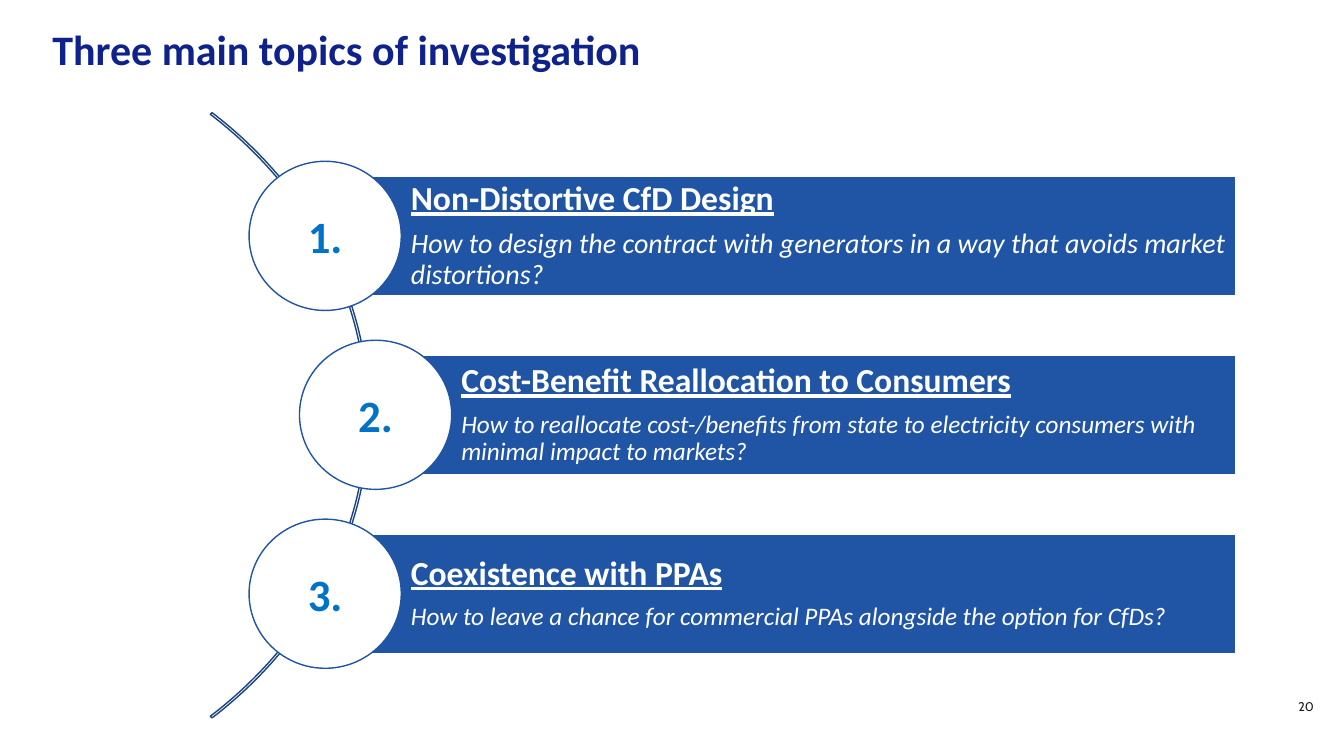
from pptx import Presentation
from pptx.dml.color import RGBColor
from pptx.enum.shapes import MSO_SHAPE
from pptx.enum.text import MSO_ANCHOR, PP_ALIGN
from pptx.util import Inches, Pt

ARC, OVAL, RECTANGLE = MSO_SHAPE.BLOCK_ARC, MSO_SHAPE.OVAL, MSO_SHAPE.RECTANGLE
MIDDLE = MSO_ANCHOR.MIDDLE
LEFT, CENTER, RIGHT = PP_ALIGN.LEFT, PP_ALIGN.CENTER, PP_ALIGN.RIGHT

UNIT = Inches(0.1)  # one grid column or row
WHITE, BLUE, DARK_BLUE = "FFFFFF", "2054A5", "1A4384"
TITLE_BLUE, NUMBER_BLUE, INK = "0F218B", "0073C8", "1D1D20"

# heading, question, question size, left edge of the circle in columns
TOPICS = [
    ("Non-Distortive CfD Design",
     "How to design the contract with generators in a way that avoids market distortions?",
     20, 24.7),
    ("Cost-Benefit Reallocation to Consumers",
     "How to reallocate cost-/benefits from state to electricity consumers with "
     "minimal impact to markets?",
     18, 29.7),
    ("Coexistence with PPAs",
     "How to leave a chance for commercial PPAs alongside the option for CfDs?",
     18, 24.7),
]
FIRST_CENTER, PITCH = 23.4, 17.75
CIRCLE_WIDTH, CIRCLE_HEIGHT = 15.1, 14.8
BAR_OFFSET, BAR_RIGHT, BAR_HEIGHT = 6.65, 122.6, 11.85


def color(value):
    return RGBColor.from_string(value)


def grid(*lengths):
    """Turn columns and rows into slide lengths."""
    return [int(UNIT * length) for length in lengths]


class SlideBuilder:
    def __init__(self, slide, font="Calibri"):
        self.slide = slide
        self.font = font

    def fill_paragraph(self, paragraph, text, size, ink, align=LEFT, font=None,
                       bold=False, italic=False, underline=False):
        paragraph.text = text
        paragraph.alignment = align
        style = paragraph.font
        style.name = font or self.font
        style.size = Pt(size)
        style.bold, style.italic, style.underline = bold, italic, underline
        style.color.rgb = color(ink)

    def text(self, area, text, size, ink, line_spacing, **style):
        box = self.slide.shapes.add_textbox(*grid(*area))
        frame = box.text_frame
        frame.word_wrap = True
        frame.vertical_anchor = MIDDLE
        paragraph = frame.paragraphs[0]
        self.fill_paragraph(paragraph, text, size, ink, **style)
        paragraph.line_spacing = Pt(line_spacing)

    def shape(self, kind, area, fill, line):
        shape = self.slide.shapes.add_shape(kind, *grid(*area))
        shape.shadow.inherit = False
        if fill:
            shape.fill.solid()
            shape.fill.fore_color.rgb = color(fill)
        else:
            shape.fill.background()
        shape.line.color.rgb = color(line)
        shape.line.width = Pt(1)
        shape.text_frame.vertical_anchor = MIDDLE
        return shape

    def arc(self, area):
        """Draw the thin arc from 315 to 45 degrees."""
        arc = self.shape(ARC, area, None, DARK_BLUE)
        for index, value in enumerate((189, 27, 0.003)):
            arc.adjustments[index] = value

    def bar(self, area, heading, question, question_size):
        frame = self.shape(RECTANGLE, area, BLUE, WHITE).text_frame
        frame.word_wrap = True
        frame.margin_left, frame.margin_right = grid(9.4, 0.6)
        frame.margin_top, frame.margin_bottom = grid(0.6, 0.6)
        self.fill_paragraph(frame.paragraphs[0], heading, 24, WHITE,
                            bold=True, underline=True)
        self.fill_paragraph(frame.add_paragraph(), question, question_size, WHITE,
                            italic=True)
        for paragraph in frame.paragraphs:
            paragraph.line_spacing = 0.9
            paragraph.space_after = Pt(0.35 * paragraph.font.size.pt)

    def circle(self, area, label):
        circle = self.shape(OVAL, area, WHITE, BLUE)
        self.fill_paragraph(circle.text_frame.paragraphs[0], label, 32, NUMBER_BLUE,
                            align=CENTER, bold=True)

    def topic(self, index, heading, question, question_size, left):
        center = FIRST_CENTER + index * PITCH
        bar_left = left + BAR_OFFSET
        self.bar((bar_left, center - BAR_HEIGHT / 2, BAR_RIGHT - bar_left, BAR_HEIGHT),
                 heading, question, question_size)
        self.circle((left, center - CIRCLE_HEIGHT / 2, CIRCLE_WIDTH, CIRCLE_HEIGHT),
                    f"{index + 1}.")


def main():
    deck = Presentation()
    deck.slide_width, deck.slide_height = Inches(13.33), Inches(7.5)
    page = SlideBuilder(deck.slides.add_slide(deck.slide_layouts[6]))

    page.text((67.5, 68.2, 63.8, 4), "20", 9, INK, 9, align=RIGHT, font="Cabin")
    page.text((4.2, 3.2, 127.1, 3.9), "Three main topics of investigation",
              30, TITLE_BLUE, 32, bold=True)
    page.arc((-54.6, 1.3, 91.2, 79.8))
    for index, topic in enumerate(TOPICS):
        page.topic(index, *topic)

    deck.save("out.pptx")


if __name__ == "__main__":
    main()
